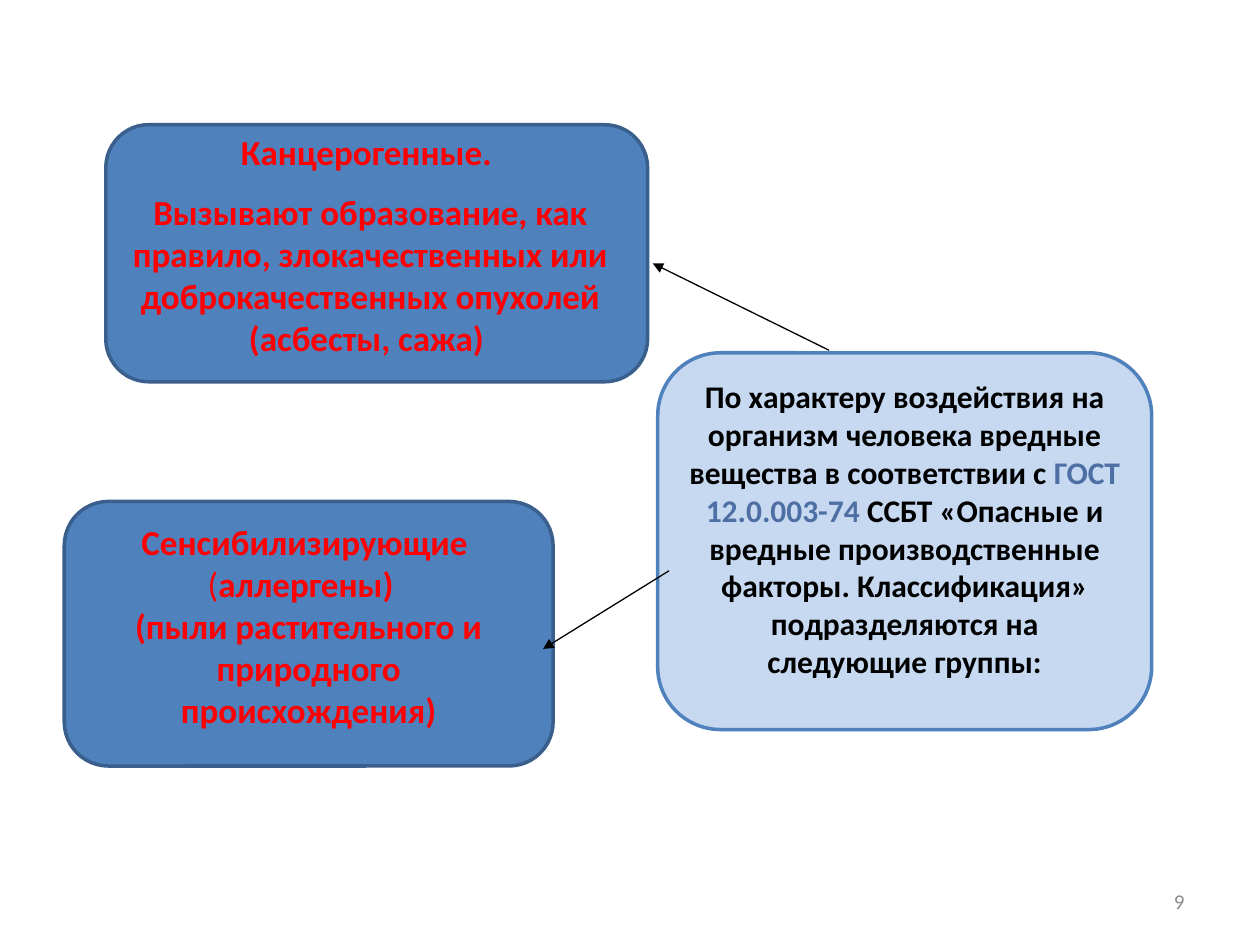
"""Build a slide on groups of harmful substances by their effect on the body."""
import pptx
import pptx.util
import pptx.dml.color
import pptx.enum.shapes
import pptx.enum.text
import pptx.oxml.ns
from lxml import etree

COLORS = {"pale": "C6D9F1", "blue": "4F81BD", "edge": "3A5F8C", "red": "FF0000",
          "black": "000000", "link": "4E6FA4", "gray": "8C8C8C"}

BASIS = [[("По характеру воздействия на организм человека вредные вещества в соответствии с ", "black", True),
          ("ГОСТ 12.0.003-74 ", "link", True),
          ("ССБТ «Опасные и вредные производственные факторы. Классификация» "
           "подразделяются на следующие группы:", "black", True)]]
ALLERGENS = [[("Сенсибилизирующие ", "red", True), (" (", "red", False), ("аллергены)  ", "red", True)],
             [("(пыли растительного и природного происхождения)", "red", True)]]
CARCINOGENS = [[("Канцерогенные. ", "red", True)],
               [("Вызывают образование, как правило, злокачественных или доброкачественных "
                 "опухолей (асбесты, сажа) ", "red", True)]]
NUMBER = [[("9", "gray", False)]]

BOXES = [((5.22, 2.8, 3.92, 2.99), "pale", "blue", BASIS, 18, 10),
         ((0.84, 0.99, 4.3, 2.04), "blue", "edge", [], 20, 0),
         ((0.51, 3.98, 3.88, 2.1), "blue", "edge", ALLERGENS, 20, 0)]
ARROWS = [((6.58, 2.78), (5.18, 2.09)), ((5.31, 4.53), (4.31, 5.15))]
CENTER = pptx.enum.text.PP_ALIGN.CENTER
RIGHT = pptx.enum.text.PP_ALIGN.RIGHT
TOP = pptx.enum.text.MSO_ANCHOR.TOP
MIDDLE = pptx.enum.text.MSO_ANCHOR.MIDDLE
LABELS = [((0.91, 0.99, 4.06, 1.92), CARCINOGENS, 20, 10, CENTER, TOP),
          ((7.17, 6.95, 2.33, 0.4), NUMBER, 12, 0, RIGHT, MIDDLE)]


def rgb(name):
    return pptx.dml.color.RGBColor.from_string(COLORS[name])


def inches(values):
    return [pptx.util.Inches(v) for v in values]


def write(tf, paragraphs, size, after, align=CENTER, anchor=TOP):
    tf.word_wrap = True
    tf.vertical_anchor = anchor
    for i, runs in enumerate(paragraphs):
        p = tf.add_paragraph() if i else tf.paragraphs[0]
        p.alignment = align
        p.space_after = pptx.util.Pt(after)
        for text, color, bold in runs:
            r = p.add_run()
            r.text = text
            r.font.name = "Calibri"
            r.font.size = pptx.util.Pt(size)
            r.font.bold = bold
            r.font.color.rgb = rgb(color)


def add_box(s, place, fill, edge, paragraphs, size, after):
    sp = s.shapes.add_shape(pptx.enum.shapes.MSO_SHAPE.ROUNDED_RECTANGLE, *inches(place))
    sp.shadow.inherit = False
    sp.fill.solid()
    sp.fill.fore_color.rgb = rgb(fill)
    sp.line.color.rgb = rgb(edge)
    sp.line.width = pptx.util.Pt(2)
    write(sp.text_frame, paragraphs, size, after)


def add_arrow(s, start, end):
    c = s.shapes.add_connector(pptx.enum.shapes.MSO_CONNECTOR.STRAIGHT, *inches(start + end))
    c.line.color.rgb = rgb("black")
    c.line.width = pptx.util.Pt(0.75)
    qn = pptx.oxml.ns.qn
    etree.SubElement(c.line._get_or_add_ln(), qn("a:tailEnd"), type="triangle")
    etree.SubElement(c._element.spPr, qn("a:effectLst"))


def main():
    prs = pptx.Presentation()
    prs.slide_width, prs.slide_height = inches((10, 7.5))
    s = prs.slides.add_slide(prs.slide_layouts[6])
    for box in BOXES:
        add_box(s, *box)
    for start, end in ARROWS:
        add_arrow(s, start, end)
    for place, *text in LABELS:
        write(s.shapes.add_textbox(*inches(place)).text_frame, *text)
    prs.save("out.pptx")


if __name__ == "__main__":
    main()
